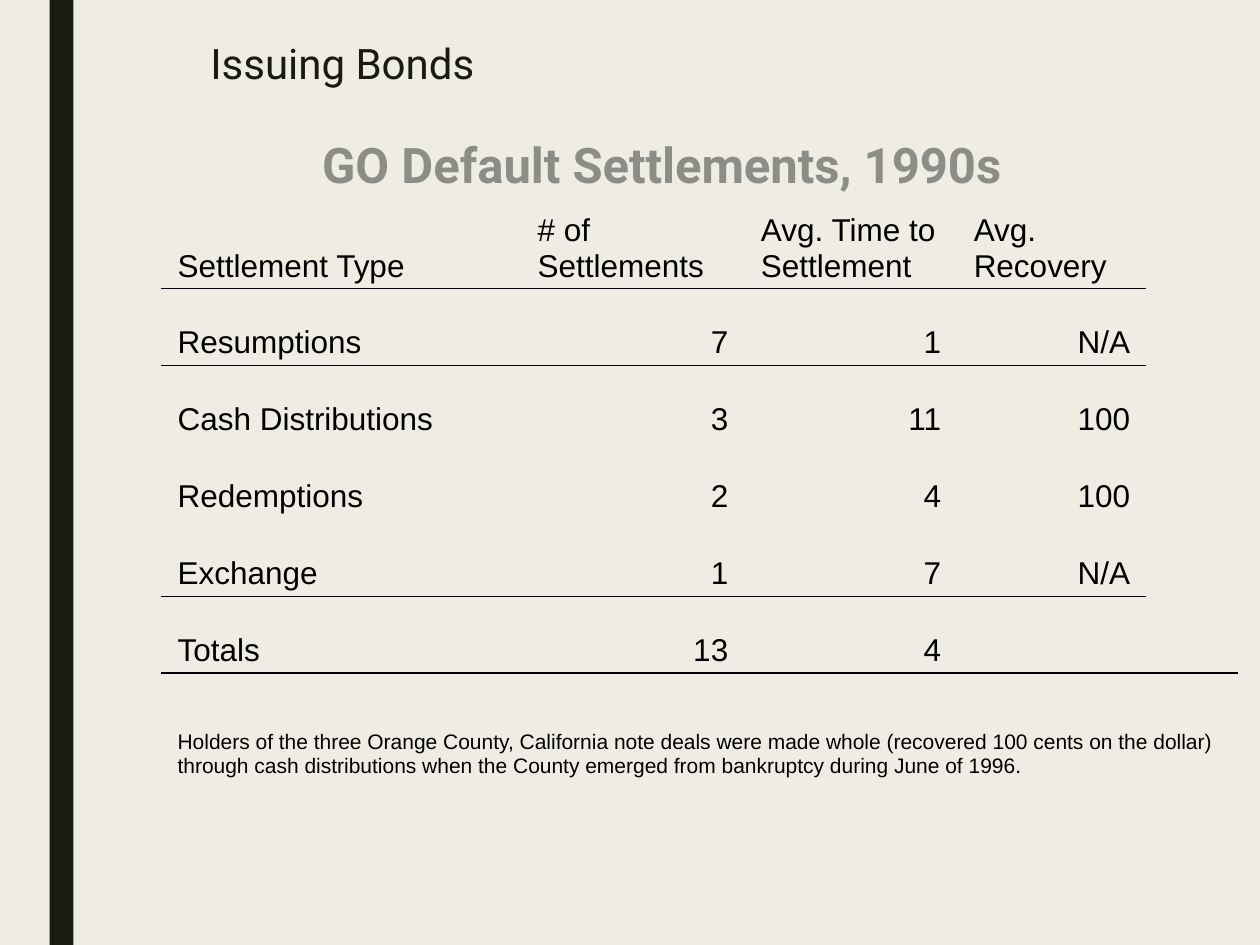
from lxml import etree
from pptx import Presentation, util as u
from pptx.dml.color import RGBColor
from pptx.enum import shapes, text
from pptx.oxml.ns import qn

COLORS = {"paper": "EFEDE3", "bar": "191B0E", "heading": "8C8D86", "ink": "000000"}
NO_GRID = "{2D5ABB26-0587-4C30-8999-92F81FD0307C}"
CELL = {"margin_left": u.Cm(0.33), "margin_right": u.Cm(0.33),
        "margin_top": u.Cm(0.1), "margin_bottom": u.Cm(0.1),
        "vertical_anchor": text.MSO_ANCHOR.BOTTOM}
COLUMNS = (7.26, 4.5, 4.29, 3.81, 0.74, 1.09)
ROWS = (2.21, *[1.55] * 5, 2.21)
SETTLEMENTS = (
    ("Settlement Type", "# of Settlements", "Avg. Time to Settlement", "Avg. Recovery"),
    ("Resumptions", "7", "1", "N/A"),
    ("Cash Distributions", "3", "11", "100"),
    ("Redemptions", "2", "4", "100"),
    ("Exchange", "1", "7", "N/A"),
    ("Totals", "13", "4"),
    ("Holders of the three Orange County, California note deals were made whole "
     "(recovered 100 cents on the dollar) through cash distributions when the County "
     "emerged from bankruptcy during June of 1996.",),
)


class BondSlide:
    """Holds the deck's style and draws each kind of element on its slide."""

    def __init__(self, deck):
        self.slide = deck.slides.add_slide(deck.slide_layouts[6])
        self.paint(self.slide.background.fill, "paper")

    def paint(self, fill, color):
        fill.solid()
        fill.fore_color.rgb = RGBColor.from_string(COLORS[color])

    def apply(self, target, values):
        for name, value in values.items():
            setattr(target, name, value)

    def wording(self, paragraph, words, color, font, **layout):
        run = paragraph.add_run()
        run.text = words
        self.apply(run.font, font)
        run.font.color.rgb = RGBColor.from_string(COLORS[color])
        self.apply(paragraph, layout)

    def bar(self, *box):
        stripe = self.slide.shapes.add_shape(
            shapes.MSO_SHAPE.RECTANGLE, *map(u.Cm, box))
        stripe.shadow.inherit = False
        self.paint(stripe.fill, "bar")
        stripe.line.fill.background()

    def heading(self, box, words, color, font, **layout):
        frame = self.slide.shapes.add_textbox(*map(u.Cm, box)).text_frame
        frame.word_wrap = True
        self.wording(frame.paragraphs[0], words, color, font, **layout)

    def edge(self, cell, side):
        line = etree.Element(qn(f"a:{side}"), w=str(u.Pt(1)))
        fill = etree.SubElement(line, qn("a:solidFill"))
        etree.SubElement(fill, qn("a:srgbClr"), val=COLORS["ink"])
        cell._tc.get_or_add_tcPr().insert(0, line)

    def rule(self, table, row, width):
        for column in range(width):
            self.edge(table.cell(row, column), "lnB")
            self.edge(table.cell(row + 1, column), "lnT")

    def table(self, left, top, records, rules):
        frame = self.slide.shapes.add_table(
            len(ROWS), len(COLUMNS), u.Cm(left), u.Cm(top),
            u.Cm(sum(COLUMNS)), u.Cm(sum(ROWS)))
        table = frame.table
        self.apply(table, {"first_row": False, "horz_banding": False})
        next(frame._element.iter(qn("a:tableStyleId"))).text = NO_GRID
        for column, width in zip(table.columns, COLUMNS):
            column.width = u.Cm(width)
        for row, height in zip(table.rows, ROWS):
            row.height = u.Cm(height)
        for cell in table.iter_cells():
            self.apply(cell, CELL)
            cell.fill.background()
        last = len(ROWS) - 1
        table.cell(last, 0).merge(table.cell(last, len(COLUMNS) - 1))
        for r, record in enumerate(records):
            font = {"name": "Arial", "size": u.Pt(12 if r == last else 18)}
            for c, words in enumerate(record):
                side = text.PP_ALIGN.RIGHT if r and c else text.PP_ALIGN.LEFT
                self.wording(table.cell(r, c).text_frame.paragraphs[0], words,
                             "ink", font, alignment=side)
        for row, width in rules.items():
            self.rule(table, row, width)


def main():
    deck = Presentation()
    deck.slide_width, deck.slide_height = u.Cm(25.4), u.Cm(19.05)
    bonds = BondSlide(deck)
    bonds.bar(1, 0, 0.48, 19.05)
    bonds.heading((3.99, 0.76, 20.83, 1.45), "Issuing Bonds", "bar",
                  {"name": "Roboto", "size": u.Pt(24)}, line_spacing=0.89)
    bonds.heading((1.91, 2.82, 22.86, 14.48), "GO Default Settlements, 1990s", "heading",
                  {"name": "Roboto", "size": u.Pt(28), "bold": True},
                  line_spacing=0.8, alignment=text.PP_ALIGN.CENTER)
    bonds.table(3.25, 3.61, SETTLEMENTS, {0: 4, 4: 4, 5: 6})
    deck.save("out.pptx")


if __name__ == "__main__":
    main()
